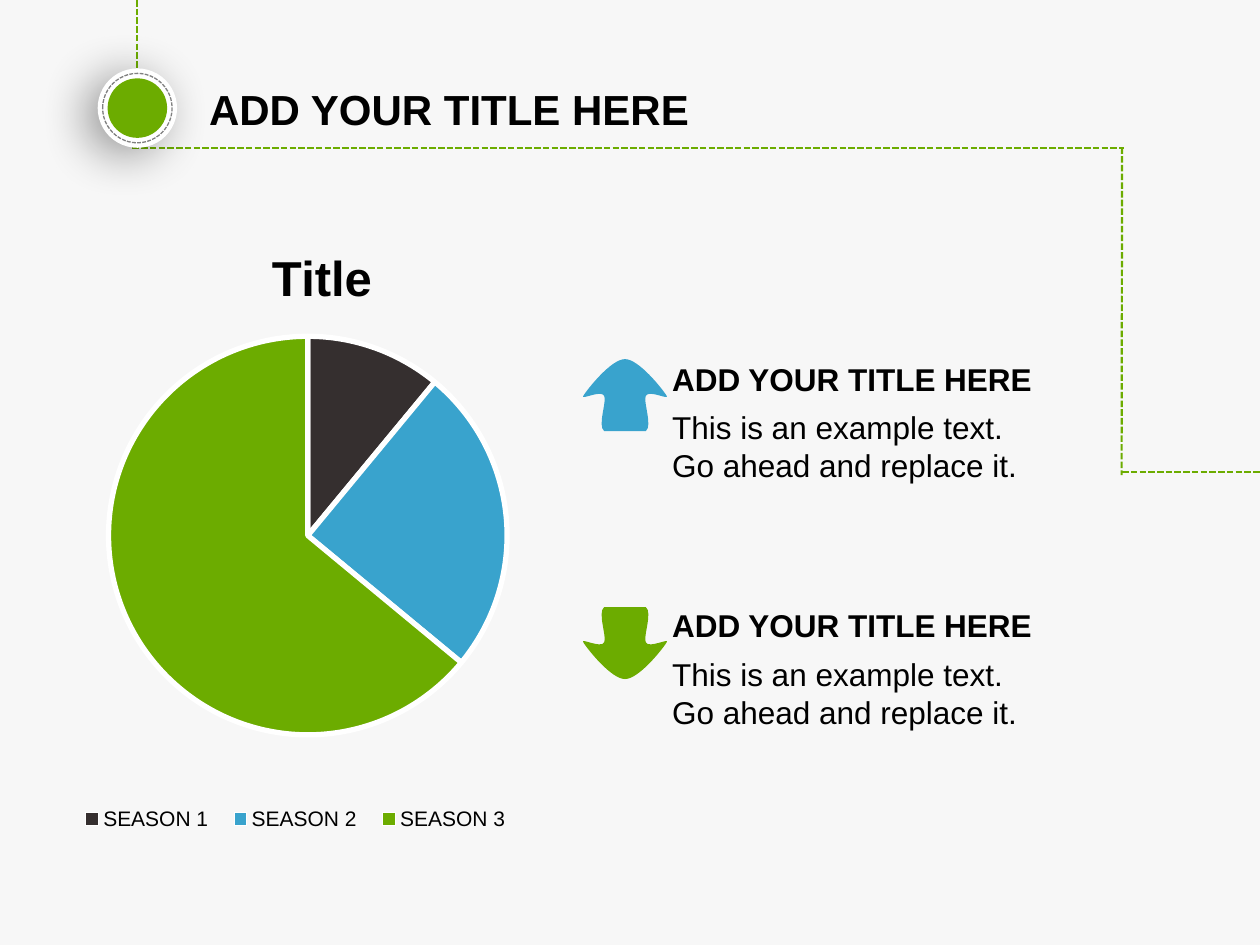
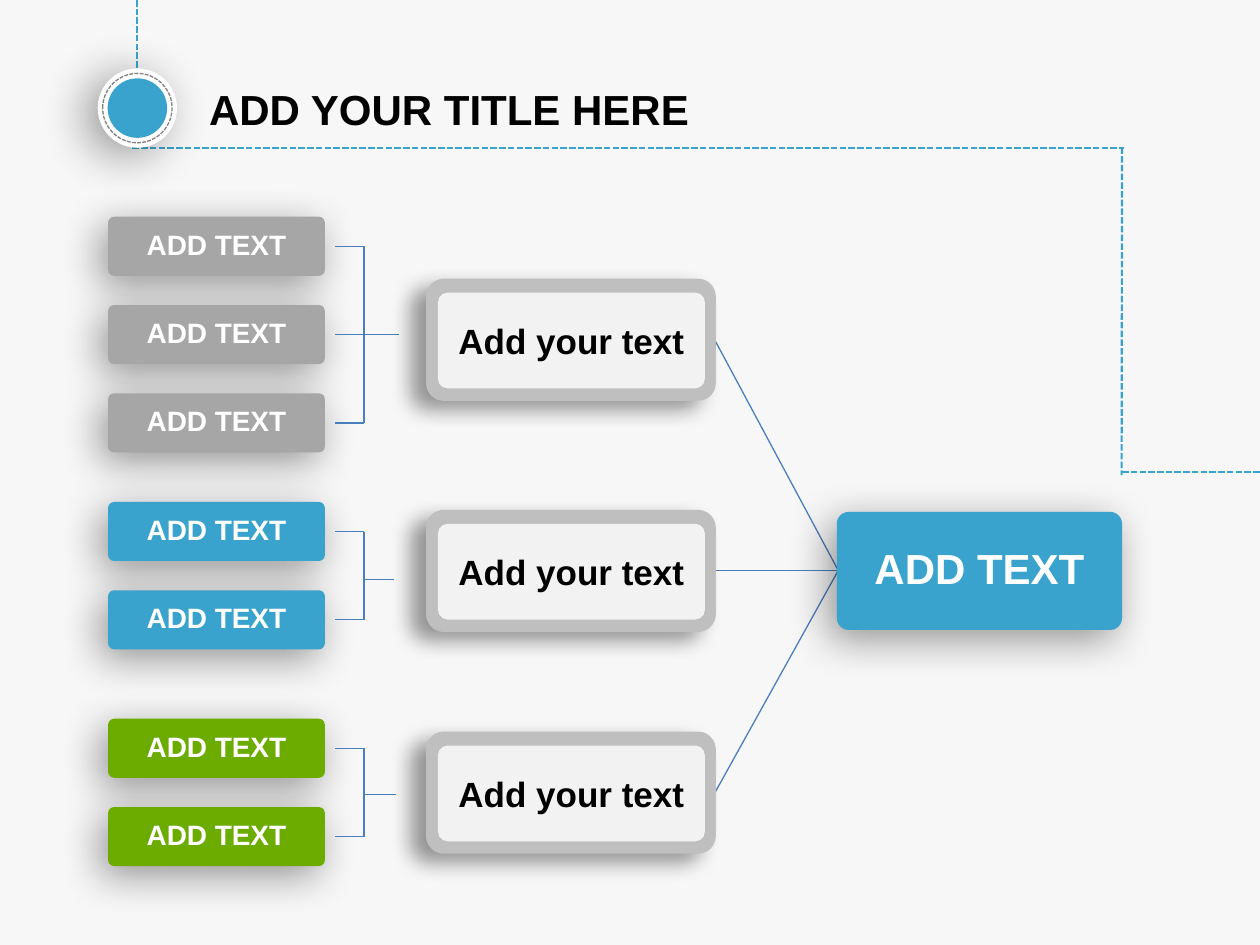
from lxml import etree
from pptx import Presentation
from pptx import util as u
from pptx.chart.data import CategoryChartData
from pptx.dml.color import RGBColor
from pptx.enum import chart as charts, dml, shapes, text
from pptx.oxml.ns import qn

COLORS = {
    "paper": "F7F7F7", "white": "FFFFFF", "black": "000000", "green": "6CAC00",
    "blue": "39A3CD", "charcoal": "352F2F", "gray": "A6A6A6", "frame": "BFBFBF",
    "plate": "F2F2F2", "stitch": "808080", "link": "4B7EBC",
}
INK = {name: RGBColor.from_string(value) for name, value in COLORS.items()}
OVAL, ROUNDED, SQUARE = (shapes.MSO_SHAPE.OVAL, shapes.MSO_SHAPE.ROUNDED_RECTANGLE,
                         shapes.MSO_SHAPE.RECTANGLE)
DASH = dml.MSO_LINE.SQUARE_DOT
KNOB_SHADOW, FRAME_SHADOW, BOX_SHADOW = (28, 8, 150), (12, 10, 150), (24, 7, 130)
lettering = []


def add_panel(canvas, kind, box, fill=None, line=None, shadow=None, caption=None):
    panel = canvas.shapes.add_shape(kind, *map(u.Cm, box))
    panel.shadow.inherit = False
    if kind == ROUNDED:
        panel.adjustments[0] = 0.1
    if fill:
        panel.fill.solid()
        panel.fill.fore_color.rgb = INK[fill]
    else:
        panel.fill.background()
    if line:
        ink, width, dash = line
        panel.line.color.rgb = INK[ink]
        panel.line.width = u.Pt(width)
        panel.line.dash_style = dash
    else:
        panel.line.fill.background()
    if shadow:
        blur, distance, angle = shadow
        effects = panel._element.spPr.find(qn("a:effectLst"))
        outer = etree.SubElement(
            effects, qn("a:outerShdw"), blurRad=str(u.Pt(blur)), dist=str(u.Pt(distance)),
            dir=str(angle * 60000), algn="ctr", rotWithShape="0")
        black = etree.SubElement(outer, qn("a:srgbClr"), val=COLORS["black"])
        etree.SubElement(black, qn("a:alpha"), val="40000")
    if caption:
        words, size, ink, spacing = caption
        frame = panel.text_frame
        margins = dict.fromkeys(("margin_left", "margin_right", "margin_top", "margin_bottom"), u.Cm(0.05))
        for name, value in {**margins, "word_wrap": True, "vertical_anchor": text.MSO_ANCHOR.MIDDLE}.items():
            setattr(frame, name, value)
        frame.text = words
        frame.paragraphs[0].alignment = text.PP_ALIGN.CENTER
        frame.paragraphs[0].line_spacing = spacing
        lettering.append((frame.paragraphs[0].font, size, True, ink))


def add_rule(slide, ends, ink, width, dash=None):
    rule = slide.shapes.add_connector(shapes.MSO_CONNECTOR.STRAIGHT, *map(u.Cm, ends))
    rule.line.color.rgb = INK[ink]
    rule.line.width = u.Pt(width)
    rule.line.dash_style = dash
    etree.SubElement(rule._element.spPr, qn("a:effectLst"))


deck = Presentation()
deck.slide_width, deck.slide_height = u.Cm(25.4), u.Cm(19.05)

for accent in ("green", "blue"):
    slide = deck.slides.add_slide(deck.slide_layouts[5])
    slide.background.fill.solid()
    slide.background.fill.fore_color.rgb = INK["paper"]
    for ends in ((2.67, 2.98, 22.66, 2.98), (2.76, 0, 2.76, 2.11),
                 (22.62, 2.97, 22.61, 9.58), (22.62, 9.52, 25.4, 9.52)):
        add_rule(slide, ends, accent, 1.25, DASH)
    knob = slide.shapes.add_group_shape()
    for radius, fill, line, shadow in (
            (0.8, "white", None, KNOB_SHADOW),
            (0.6, accent, None, None),
            (0.7, None, ("stitch", 0.75, DASH), None)):
        add_panel(knob, OVAL, (2.77 - radius, 2.18 - radius, 2 * radius, 2 * radius), fill, line, shadow)
    title = slide.shapes.title
    for name, value in {"left": 3.96, "top": 1.3, "width": 13.69, "height": 1.78}.items():
        setattr(title, name, u.Cm(value))
    title.text_frame.text = "ADD YOUR TITLE HERE"
    title.text_frame.vertical_anchor = text.MSO_ANCHOR.MIDDLE
    title.text_frame.paragraphs[0].alignment = text.PP_ALIGN.LEFT
    lettering.append((title.text_frame.paragraphs[0].font, 24, True, "black"))

seasons_slide, tree_slide = deck.slides

seasons = CategoryChartData()
seasons.categories = ["SEASON 1", "SEASON 2", "SEASON 3"]
seasons.add_series("Series 1", (11, 25, 64))
pie = seasons_slide.shapes.add_chart(
    charts.XL_CHART_TYPE.PIE, *map(u.Cm, (-0.79, 3.96, 16.46, 14.1)), seasons).chart
pie.font.name, pie.font.size = "Calibri", u.Pt(18)
pie.has_title = pie.has_legend = True
pie.chart_title.text_frame.text = "Title"
pie.legend.position = charts.XL_LEGEND_POSITION.RIGHT
pie.legend.include_in_layout = True
pie.plots[0].vary_by_categories = True
lettering += [(pie.chart_title.text_frame.paragraphs[0].runs[0].font, 28, True, "black"),
              (pie.legend.font, 12, False, "black")]
for index, ink in enumerate(("charcoal", "blue", "green")):
    wedge = pie.plots[0].series[0].points[index].format
    wedge.fill.solid()
    wedge.fill.fore_color.rgb = INK[ink]
    wedge.line.color.rgb = INK["white"]
    wedge.line.width = u.Pt(3)

for part, place in (("title", {"x": 0.37, "y": 0.06}),
                    ("plotArea", {"x": 0.18, "y": 0.2, "w": 0.49, "h": 0.57}),
                    ("legend", {"x": 0.13, "y": 0.86, "w": 0.56, "h": 0.06})):
    holder = pie.element.xpath(f"c:chart/c:{part}")[0]
    for automatic in holder.findall(qn("c:layout")):
        holder.remove(automatic)
    layout = etree.Element(qn("c:layout"))
    manual = etree.SubElement(layout, qn("c:manualLayout"))
    if part == "plotArea":
        etree.SubElement(manual, qn("c:layoutTarget"), val="inner")
        holder.insert(0, layout)
    else:
        holder.find(qn("c:overlay")).addprevious(layout)
    for axis in "xy":
        etree.SubElement(manual, qn(f"c:{axis}Mode"), val="edge")
    for name, value in place.items():
        etree.SubElement(manual, qn(f"c:{name}"), val=str(value))

left_side = [(0, 1.45),
             (-0.28, 1.45), (-0.76, 0.84), (-0.84, 0.71),
             (-0.91, 0.61), (-0.48, 0.84), (-0.42, 0.71),
             (-0.36, 0.61), (-0.56, 0.1), (-0.42, 0)]
arrow = left_side + [(-x, y) for x, y in reversed(left_side)]
curve_starts = (0, 3, 6, 10, 13, 16)

for note_top, arrow_base, direction, ink in ((6.75, 8.69, -1, "blue"), (11.72, 12.24, 1, "green")):
    outline = [(u.Cm(12.6 + x), u.Cm(arrow_base + direction * y)) for x, y in arrow]
    builder = seasons_slide.shapes.build_freeform(*outline[0], scale=1)
    builder.add_line_segments(outline[1:], close=True)
    pointer = builder.convert_to_shape()
    segments = pointer._element.xpath(".//a:lnTo")
    for first in curve_starts:
        curve = etree.Element(qn("a:cubicBezTo"))
        segments[first].addprevious(curve)
        for segment in segments[first:first + 3]:
            curve.append(segment[0])
            segment.getparent().remove(segment)
    pointer.shadow.inherit = False
    pointer.fill.solid()
    pointer.fill.fore_color.rgb = INK[ink]
    pointer.line.fill.background()

    note = seasons_slide.shapes.add_textbox(*map(u.Cm, (13.3, note_top, 8.53, 3.18))).text_frame
    note.word_wrap = True
    note.auto_size = text.MSO_AUTO_SIZE.SHAPE_TO_FIT_TEXT
    note.text = "ADD YOUR TITLE HERE\nThis is an example text.\nGo ahead and replace it."
    note.paragraphs[0].line_spacing = 1.5
    note.paragraphs[0].space_after = u.Pt(6)
    lettering += [(line.font, 18, row == 0, "black") for row, line in enumerate(note.paragraphs)]

hub_left, hub_middle = 16.9, 11.5
for branch_end in (6.65, 11.5, 16.18):
    add_rule(tree_slide, (hub_left, hub_middle, 14.3, branch_end), "link", 0.75)
hub = tree_slide.shapes.add_group_shape()
add_panel(hub, ROUNDED, (16.87, 10.32, 5.75, 2.38), "blue", None, BOX_SHADOW)
add_panel(hub, SQUARE, (16.92, 10.38, 5.65, 2.24), caption=("ADD TEXT", 24, "white", 0.9))

leaf_height, leaf_pitch = 1.19, 1.78
for ink, first_top, leaf_count, frame_top, exit_right, exit_middle in (
        ("gray", 4.37, 3, 5.76, 8.05, 6.74),
        ("blue", 10.12, 2, 10.42, 7.95, 11.68),
        ("green", 14.49, 2, 14.89, 7.98, 16.01)):
    tops = [first_top + leaf_pitch * row for row in range(leaf_count)]
    middles = [top + leaf_height / 2 for top in tops]
    for row, (top, middle) in enumerate(zip(tops, middles)):
        leaf = tree_slide.shapes.add_group_shape()
        add_panel(leaf, ROUNDED, (2.18, top, 4.37, leaf_height), ink, None, BOX_SHADOW)
        add_panel(leaf, SQUARE, (2.23, top + 0.04, 4.27, 1.11), ink, caption=("ADD TEXT", 16, "white", 0.9))
        stub_right = exit_right if 2 * row == leaf_count - 1 else 7.34
        add_rule(tree_slide, (6.76, middle, stub_right, middle), "link", 0.75)
    add_rule(tree_slide, (7.34, middles[0], 7.34, middles[-1]), "link", 0.75)
    if leaf_count % 2 == 0:
        add_rule(tree_slide, (7.34, exit_middle, exit_right, exit_middle), "link", 0.75)
    card = tree_slide.shapes.add_group_shape()
    add_panel(card, ROUNDED, (8.73, frame_top, 5.56, 2.18), "frame", ("frame", 8, None), FRAME_SHADOW)
    add_panel(card, ROUNDED, (8.83, frame_top + 0.14, 5.38, 1.93), "plate",
              caption=("Add your text", 20, "black", 1.0))

for font, size, bold, ink in lettering:
    for name, value in {"name": "Arial", "size": u.Pt(size), "bold": bold}.items():
        setattr(font, name, value)
    font.color.rgb = INK[ink]

deck.save("out.pptx")
